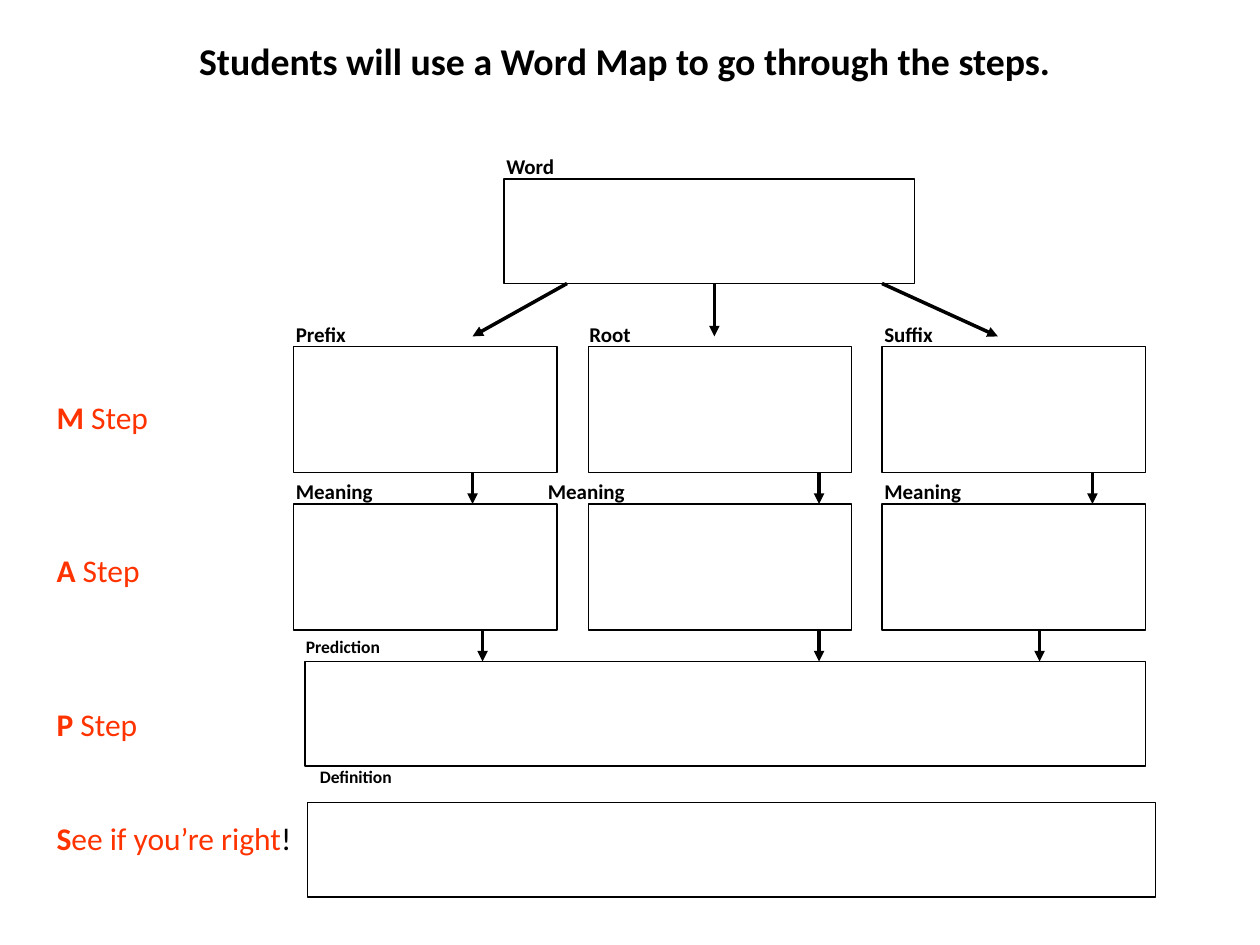
from pptx import Presentation
from pptx import util as u
from pptx.dml.color import RGBColor
from pptx.enum import shapes, text
from pptx.oxml.ns import qn
from lxml import etree

BLACK = RGBColor(0x00, 0x00, 0x00)
STEP_RED = RGBColor(0xFF, 0x33, 0x00)


class WordMap:
    font = "Calibri"

    def __init__(self, slide):
        self.slide = slide

    def style(self, run, size, bold=True, color=BLACK):
        run.font.name = self.font
        run.font.size = u.Pt(size)
        run.font.bold = bold
        run.font.color.rgb = color

    def title(self, wording, *place):
        title = self.slide.shapes.title
        title.left, title.top, title.width, title.height = map(u.Inches, place)
        frame = title.text_frame
        frame.text = wording
        frame.auto_size = text.MSO_AUTO_SIZE.NONE
        frame.vertical_anchor = text.MSO_ANCHOR.TOP
        frame.paragraphs[0].alignment = text.PP_ALIGN.CENTER
        self.style(frame.paragraphs[0].runs[0], 21.6)

    def box(self, *place):
        box = self.slide.shapes.add_shape(
            shapes.MSO_SHAPE.RECTANGLE, *map(u.Inches, place))
        box.shadow.inherit = False
        box.fill.background()
        box.line.color.rgb = BLACK
        box.line.width = u.Pt(0.75)

    def label(self, wording, left, top, size=12):
        label = self.slide.shapes.add_textbox(
            *map(u.Inches, (left, top, 1, 0.33)))
        label.text_frame.word_wrap = True
        label.text_frame.text = wording
        self.style(label.text_frame.paragraphs[0].runs[0], size)

    def steps(self, steps, *place):
        column = self.slide.shapes.add_textbox(*map(u.Inches, place))
        frame = column.text_frame
        frame.word_wrap = False
        for index, (gap, parts) in enumerate(steps):
            step = frame.paragraphs[0] if index == 0 else frame.add_paragraph()
            step.space_before = u.Pt(gap)
            for wording, bold, color in parts:
                run = step.add_run()
                run.text = wording
                self.style(run, 18, bold, color)

    def arrow(self, *ends):
        arrow = self.slide.shapes.add_connector(
            shapes.MSO_CONNECTOR.STRAIGHT, *map(u.Inches, ends))
        arrow.line.color.rgb = BLACK
        arrow.line.width = u.Pt(2)
        etree.SubElement(arrow.line._get_or_add_ln(), qn("a:tailEnd"), type="triangle")
        etree.SubElement(arrow._element.spPr, qn("a:effectLst"))


def main():
    deck = Presentation()
    deck.slide_width, deck.slide_height = u.Inches(10), u.Inches(7.5)
    word_map = WordMap(deck.slides.add_slide(deck.slide_layouts[5]))

    word_map.title("Students will use a Word Map to go through the steps.",
                   0.75, 0.25, 8.42, 0.83)

    word_map.box(4, 1.42, 3.26, 0.83)
    for row_top in (2.75, 4):
        for column_left in (2.33, 4.67, 7):
            word_map.box(column_left, row_top, 2.09, 1)
    word_map.box(2.42, 5.25, 6.67, 0.83)
    word_map.box(2.44, 6.37, 6.73, 0.75)

    word_map.label("Word", 3.92, 1.17)
    for part, left in (("Prefix", 2.25), ("Root", 4.58), ("Suffix", 6.92)):
        word_map.label(part, left, 2.5)
    for left in (2.25, 4.25, 6.92):
        word_map.label("Meaning", left, 3.75)
    word_map.label("Prediction", 2.33, 5, 10)
    word_map.label("Definition", 2.44, 6.03, 10)

    lettered = [(gap, [(letter, True, STEP_RED), (" Step", False, STEP_RED)])
                for letter, gap in (("M", 0), ("A", 66), ("P", 66))]
    check = (44, [("S", True, STEP_RED),
                  ("ee if you’re right", False, STEP_RED),
                  ("!", False, BLACK)])
    word_map.steps(lettered + [check], 0.35, 3.11, 2.09, 3.74)

    for start, end in ((4.5, 3.75), (5.67, 5.67), (7, 7.92)):
        word_map.arrow(start, 2.25, end, 2.67)
    for top, centers in ((3.75, (3.75, 6.5, 8.67)), (5, (3.83, 6.5, 8.25))):
        for center in centers:
            word_map.arrow(center, top, center, top + 0.25)

    deck.save("out.pptx")


if __name__ == "__main__":
    main()
